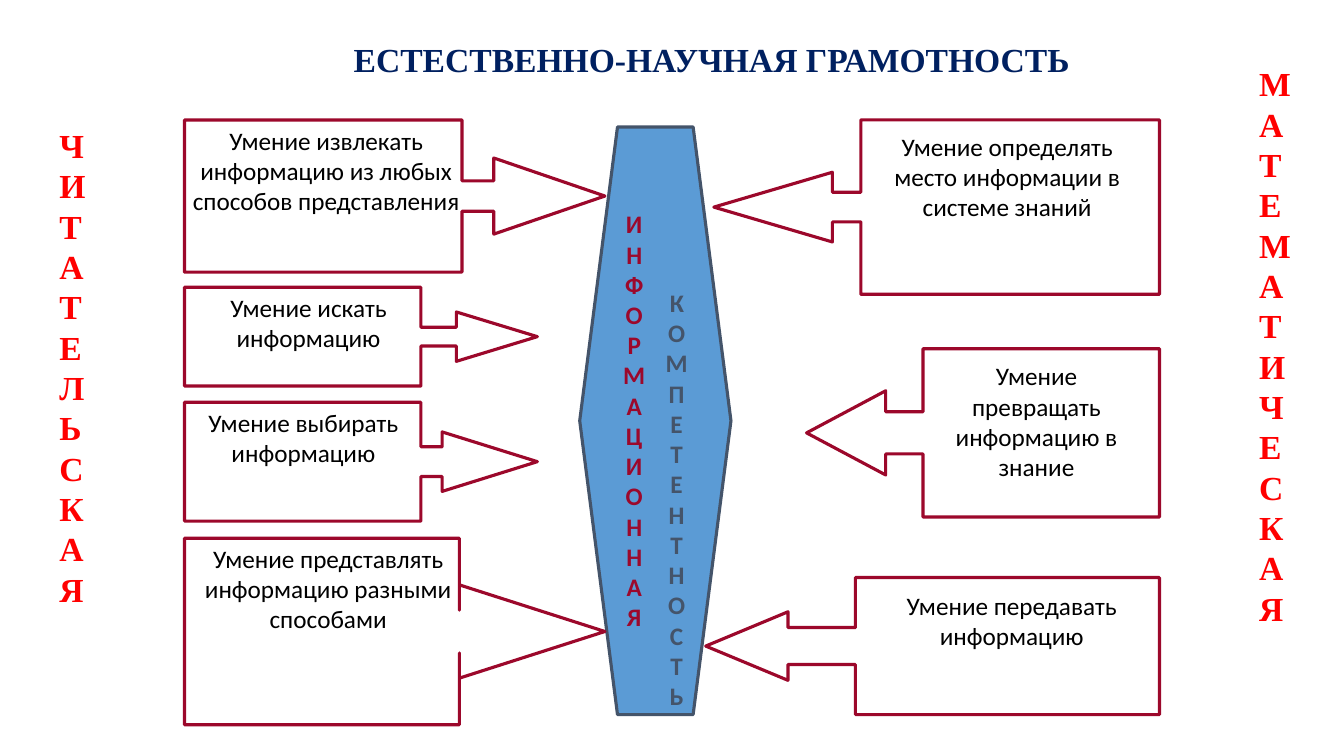
"""Build the slide on the skills that make up information competence."""
from dataclasses import dataclass

from pptx import Presentation
from pptx.dml.color import RGBColor
from pptx.enum.shapes import MSO_SHAPE
from pptx.enum.text import MSO_ANCHOR, MSO_AUTO_SIZE, PP_ALIGN
from pptx.util import Inches, Pt

CRIMSON, SLATE, SKY = "9C082B", "44546A", "5B9BD5"
RED, NAVY, BLACK = "FF0000", "002060", "000000"
Box = tuple[float, float, float, float]

BODY = {"name": "Calibri", "size": Pt(18), "bold": False}
LETTERS = {"name": "Calibri", "size": Pt(18), "bold": True}
HEADING = {"name": "Times New Roman", "size": Pt(24), "bold": True}


@dataclass
class Skill:
    """A skill with its arrow callout and the place of its label."""
    text: str
    label: Box
    arrow: MSO_SHAPE
    callout: Box
    adjustments: tuple[float, ...]


@dataclass
class Column:
    """A word written downwards."""
    text: str
    box: Box
    color: str
    font: dict
    align: PP_ALIGN
    stacked: bool


RIGHT, LEFT = MSO_SHAPE.RIGHT_ARROW_CALLOUT, MSO_SHAPE.LEFT_ARROW_CALLOUT
SKILLS = [
    Skill("Умение извлекать информацию из любых способов представления",
          (1.67, 1.19, 3.13, 0.92), RIGHT, (1.83, 1.19, 4.17, 1.51), (0.2, 0.25, 0.73, 0.66)),
    Skill("Умение искать информацию",
          (1.83, 2.85, 2.46, 0.64), RIGHT, (1.83, 2.85, 3.5, 0.98), (0.19, 0.25, 0.82, 0.67)),
    Skill("Умение выбирать информацию",
          (1.83, 3.99, 2.36, 0.64), RIGHT, (1.83, 3.99, 3.5, 1.18), (0.25, 0.25, 0.8, 0.67)),
    Skill("Умение представлять информацию разными способами",
          (1.83, 5.34, 2.85, 0.92), RIGHT, (1.83, 5.34, 4.17, 1.85), (0.23, 0.25, 0.78, 0.66)),
    Skill("Умение определять место информации в системе знаний",
          (8.64, 1.25, 2.7, 0.92), LEFT, (7.08, 1.19, 4.42, 1.73), (0.17, 0.2, 0.68, 0.67)),
    Skill("Умение превращать информацию в знание",
          (9.22, 3.53, 2.12, 1.19), LEFT, (8, 3.46, 3.5, 1.67), (0.25, 0.25, 0.47, 0.67)),
    Skill("Умение передавать информацию",
          (8.67, 5.81, 2.73, 0.64), LEFT, (7, 5.73, 4.5, 1.36), (0.27, 0.25, 0.6, 0.67)),
]
COLUMNS = [
    Column("ИНФОРМАЦИОННАЯ", (6.08, 2.02, 0.42, 3.91), CRIMSON, LETTERS, PP_ALIGN.CENTER, False),
    Column("КОМПЕТЕНТНОСТЬ", (6.5, 2.8, 0.42, 3.91), SLATE, LETTERS, PP_ALIGN.CENTER, False),
    Column("ЧИТАТЕЛЬСКАЯ", (0.49, 1.19, 0.64, 5.82), RED, HEADING, PP_ALIGN.LEFT, True),
    Column("МАТЕМАТИЧЕСКАЯ", (12.39, 0.58, 0.64, 6.34), RED, HEADING, PP_ALIGN.LEFT, True),
]


def rgb(color: str) -> RGBColor:
    """Turn a hex string into a colour."""
    return RGBColor.from_string(color)


def inches(box: Box) -> list[Inches]:
    """Turn left, top, width and height into lengths."""
    return [Inches(length) for length in box]


def write(shape, text: str, font: dict, color: str, align=PP_ALIGN.CENTER) -> None:
    """Put formatted text at the top of a shape."""
    frame = shape.text_frame
    frame.text = text
    frame.word_wrap = True
    frame.vertical_anchor = MSO_ANCHOR.TOP
    frame.auto_size = MSO_AUTO_SIZE.SHAPE_TO_FIT_TEXT
    paragraph = frame.paragraphs[0]
    paragraph.alignment = align
    run_font = paragraph.runs[0].font
    for name, value in font.items():
        setattr(run_font, name, value)
    run_font.color.rgb = rgb(color)


def add_outline(slide, kind: MSO_SHAPE, box: Box, adjustments: tuple[float, ...], line: str):
    """Add an unfilled preset shape with a coloured outline."""
    shape = slide.shapes.add_shape(kind, *inches(box))
    shape.shadow.inherit = False
    for index, value in enumerate(adjustments):
        shape.adjustments[index] = value
    shape.fill.background()
    shape.line.color.rgb = rgb(line)
    shape.line.width = Pt(2.25)
    return shape


def add_skill(slide, skill: Skill) -> None:
    """Add a skill's callout and its label."""
    add_outline(slide, skill.arrow, skill.callout, skill.adjustments, CRIMSON)
    label = slide.shapes.add_textbox(*inches(skill.label))
    write(label, skill.text, BODY, BLACK)


def add_column(slide, column: Column) -> None:
    """Add a word whose letters run downwards."""
    shape = slide.shapes.add_textbox(*inches(column.box))
    write(shape, column.text, column.font, column.color, column.align)
    if column.stacked:
        shape.text_frame._txBody.bodyPr.set("vert", "wordArtVert")


def main() -> None:
    """Build and save the presentation."""
    presentation = Presentation()
    presentation.slide_width, presentation.slide_height = Inches(13.33), Inches(7.5)
    slide = presentation.slides.add_slide(presentation.slide_layouts[5])

    title = slide.shapes.title
    title.left, title.top, title.width, title.height = inches((2.78, 0.34, 8.56, 0.5))
    write(title, "ЕСТЕСТВЕННО-НАУЧНАЯ ГРАМОТНОСТЬ", HEADING, NAVY)

    core = add_outline(slide, MSO_SHAPE.HEXAGON, (5.75, 1.26, 1.5, 5.83), (0.25,), SLATE)
    core.fill.solid()
    core.fill.fore_color.rgb = rgb(SKY)

    for skill in SKILLS:
        add_skill(slide, skill)
    for column in COLUMNS:
        add_column(slide, column)
    presentation.save("out.pptx")


if __name__ == "__main__":
    main()
